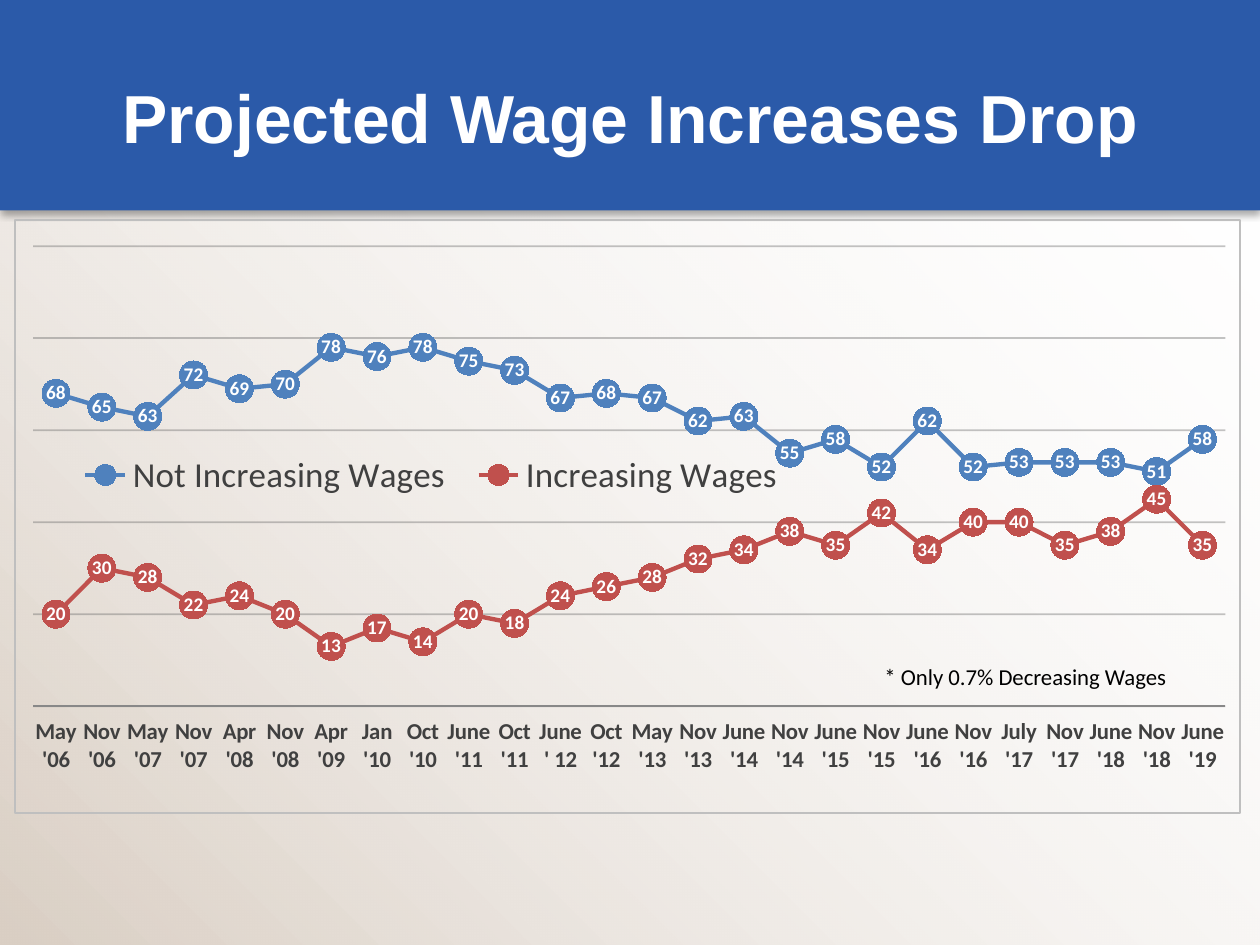
from lxml import etree
from pptx import Presentation
from pptx.chart.data import CategoryChartData
from pptx.dml.color import RGBColor
from pptx.enum.chart import (XL_CHART_TYPE as ChartType, XL_LABEL_POSITION as LabelPos,
                             XL_LEGEND_POSITION as LegendPos, XL_MARKER_STYLE as Marker,
                             XL_TICK_LABEL_POSITION as TickLabels, XL_TICK_MARK as Tick)
from pptx.enum.shapes import MSO_SHAPE as Shape
from pptx.enum.text import MSO_ANCHOR as Anchor, PP_ALIGN as Align
from pptx.oxml import parse_xml
from pptx.oxml.ns import nsdecls, qn
from pptx.util import Inches, Pt

# Content
TITLE = "Projected Wage Increases Drop"
NOTE = "* Only 0.7% Decreasing Wages"
MONTHS = ["May '06", "Nov '06", "May '07", "Nov '07", "Apr '08", "Nov '08", "Apr '09",
          "Jan '10", "Oct '10", "June '11", "Oct '11", "June ' 12", "Oct '12", "May '13",
          "Nov '13", "June '14", "Nov '14", "June '15", "Nov '15", "June '16", "Nov '16",
          "July '17", "Nov '17", "June '18", "Nov '18", "June '19"]
SERIES = [
    ("Not Increasing Wages", "4F81BD",
     [68, 65, 63, 72, 69, 70, 78, 76, 78, 75, 73, 67, 68, 67, 62, 63, 55, 58, 52, 62,
      52, 53, 53, 53, 51, 58]),
    ("Increasing Wages", "C0504D",
     [20, 30, 28, 22, 24, 20, 13, 17, 14, 20, 18, 24, 26, 28, 32, 34, 38, 35, 42, 34,
      40, 40, 35, 38, 45, 35]),
]

# Layout: inches on the slide, shares of the chart's size inside it
WIDTH, HEIGHT = 10, 7.5
BANNER_HEIGHT = 1.67
TITLE_AREA = (0.5, 0.3, 9, 1.25)
CHART_AREA = (0.11, 1.74, 9.74, 4.72)
NOTE_AREA = (6.97, 5.21, 2.5, 0.31)
PLOT_SHARE = (0.015, 0.044, 0.973, 0.776)
LEGEND_SHARE = (0.04, 0.38, 0.6, 0.1)


def color(value):
    return RGBColor.from_string(value)


def style_font(font, fill, **values):
    for name, value in values.items():
        setattr(font, name, value)
    font.color.rgb = color(fill)


def style_line(line, fill, width):
    line.color.rgb = color(fill)
    line.width = Pt(width)


def set_alpha(color_element, percent):
    etree.SubElement(color_element, qn("a:alpha")).set("val", str(percent * 1000))


def add_panel(page, height):
    panel = page.shapes.add_shape(Shape.RECTANGLE, 0, 0, Inches(WIDTH), Inches(height))
    panel.shadow.inherit = False
    panel.line.fill.background()
    return panel


def add_text(page, area, text, wrap, anchor, align, fill, **font):
    box = page.shapes.add_textbox(*map(Inches, area))
    frame = box.text_frame
    frame.word_wrap, frame.vertical_anchor = wrap, anchor
    for side in ("left", "top", "right", "bottom"):
        setattr(frame, f"margin_{side}", Inches(0.05))
    para = frame.paragraphs[0]
    para.alignment = align
    span = para.add_run()
    span.text = text
    style_font(span.font, fill, **font)


def manual_layout(share, inner=False):
    target = '<c:layoutTarget val="inner"/>' if inner else ""
    modes = "".join(f'<c:{edge}Mode val="edge"/>' for edge in "xy")
    sizes = "".join(f'<c:{key} val="{value}"/>' for key, value in zip("xywh", share))
    return parse_xml(f'<c:layout {nsdecls("c")}><c:manualLayout>{target}{modes}{sizes}'
                     '</c:manualLayout></c:layout>')


def add_wage_chart(page):
    data = CategoryChartData(number_format="0")
    data.categories = MONTHS
    for name, _, values in SERIES:
        data.add_series(name, values)
    chart = page.shapes.add_chart(ChartType.LINE_MARKERS, *map(Inches, CHART_AREA), data).chart
    style_font(chart.font, "000000", name="Calibri", size=Pt(10))
    chart.has_title = False

    # Lines, markers and value labels
    plot = chart.plots[0]
    plot.vary_by_categories = False
    for series, (_, fill, _) in zip(plot.series, SERIES):
        series.smooth = False
        style_line(series.format.line, fill, 2.5)
        series.marker.style, series.marker.size = Marker.CIRCLE, 16
        series.marker.format.fill.solid()
        series.marker.format.fill.fore_color.rgb = color(fill)
        series.marker.format.line.fill.background()
        labels = series.data_labels
        labels.show_value, labels.position = True, LabelPos.CENTER
        labels.number_format, labels.number_format_is_linked = "0", False
        style_font(labels.font, "FFFFFF", name="Calibri", size=Pt(11), bold=True)

    # Axes
    months, scale = chart.category_axis, chart.value_axis
    for axis in (months, scale):
        axis.major_tick_mark = axis.minor_tick_mark = Tick.NONE
    months.tick_label_position = TickLabels.LOW
    style_font(months.tick_labels.font, "404040", name="Calibri", size=Pt(13), bold=True)
    style_line(months.format.line, "888888", 1)
    scale.minimum_scale, scale.maximum_scale, scale.major_unit = 0, 100, 20
    scale.tick_label_position = TickLabels.NONE
    scale.format.line.fill.background()
    grid = scale.major_gridlines
    style_line(grid.format.line, "666666", 1)
    set_alpha(chart._chartSpace.find(f".//{qn('c:majorGridlines')}//{qn('a:srgbClr')}"), 39)

    # Legend laid over the plot
    chart.has_legend = True
    legend = chart.legend
    legend.position, legend.include_in_layout = LegendPos.RIGHT, True
    style_font(legend.font, "404040", name="Calibri", size=Pt(20))
    legend_element = legend._element
    for old in legend_element.findall(qn("c:layout")):
        legend_element.remove(old)
    legend_element.find(qn("c:legendPos")).addnext(manual_layout(LEGEND_SHARE))

    # Plot position and chart border
    plot_area = chart._chartSpace.chart.plotArea
    for old in plot_area.findall(qn("c:layout")):
        plot_area.remove(old)
    plot_area.insert(0, manual_layout(PLOT_SHARE, inner=True))
    chart._chartSpace.chart.addnext(parse_xml(
        f'<c:spPr {nsdecls("c", "a")}><a:noFill/><a:ln w="{Pt(1)}"><a:solidFill>'
        '<a:srgbClr val="BFBFBF"/></a:solidFill></a:ln></c:spPr>'))


def main():
    deck = Presentation()
    deck.slide_width, deck.slide_height = Inches(WIDTH), Inches(HEIGHT)
    page = deck.slides.add_slide(deck.slide_layouts[6])

    # Backdrop fading towards the top right
    backdrop = add_panel(page, HEIGHT)
    backdrop.fill.gradient()
    backdrop.fill.gradient_angle = 45
    for stop, fill, position in zip(backdrop.fill.gradient_stops, ("DACFC4", "FFFFFF"), (0, 1)):
        stop.color.rgb, stop.position = color(fill), position
    set_alpha(backdrop._element.spPr.findall(f".//{qn('a:srgbClr')}")[-1], 0)

    # Banner with a soft shadow below
    banner = add_panel(page, BANNER_HEIGHT)
    banner.fill.solid()
    banner.fill.fore_color.rgb = color("2B5AA9")
    banner._element.spPr.find(qn("a:effectLst")).append(parse_xml(
        f'<a:outerShdw {nsdecls("a")} blurRad="{Pt(4)}" dist="{Pt(2.2)}" dir="5400000" '
        'rotWithShape="0"><a:srgbClr val="000000"><a:alpha val="32000"/></a:srgbClr>'
        '</a:outerShdw>'))

    add_text(page, TITLE_AREA, TITLE, True, Anchor.MIDDLE, Align.CENTER, "FFFFFF",
             name="Arial", size=Pt(38.8), bold=True)
    add_wage_chart(page)
    add_text(page, NOTE_AREA, NOTE, False, Anchor.TOP, Align.LEFT, "000000",
             name="Calibri", size=Pt(13))
    deck.save("out.pptx")


if __name__ == "__main__":
    main()
